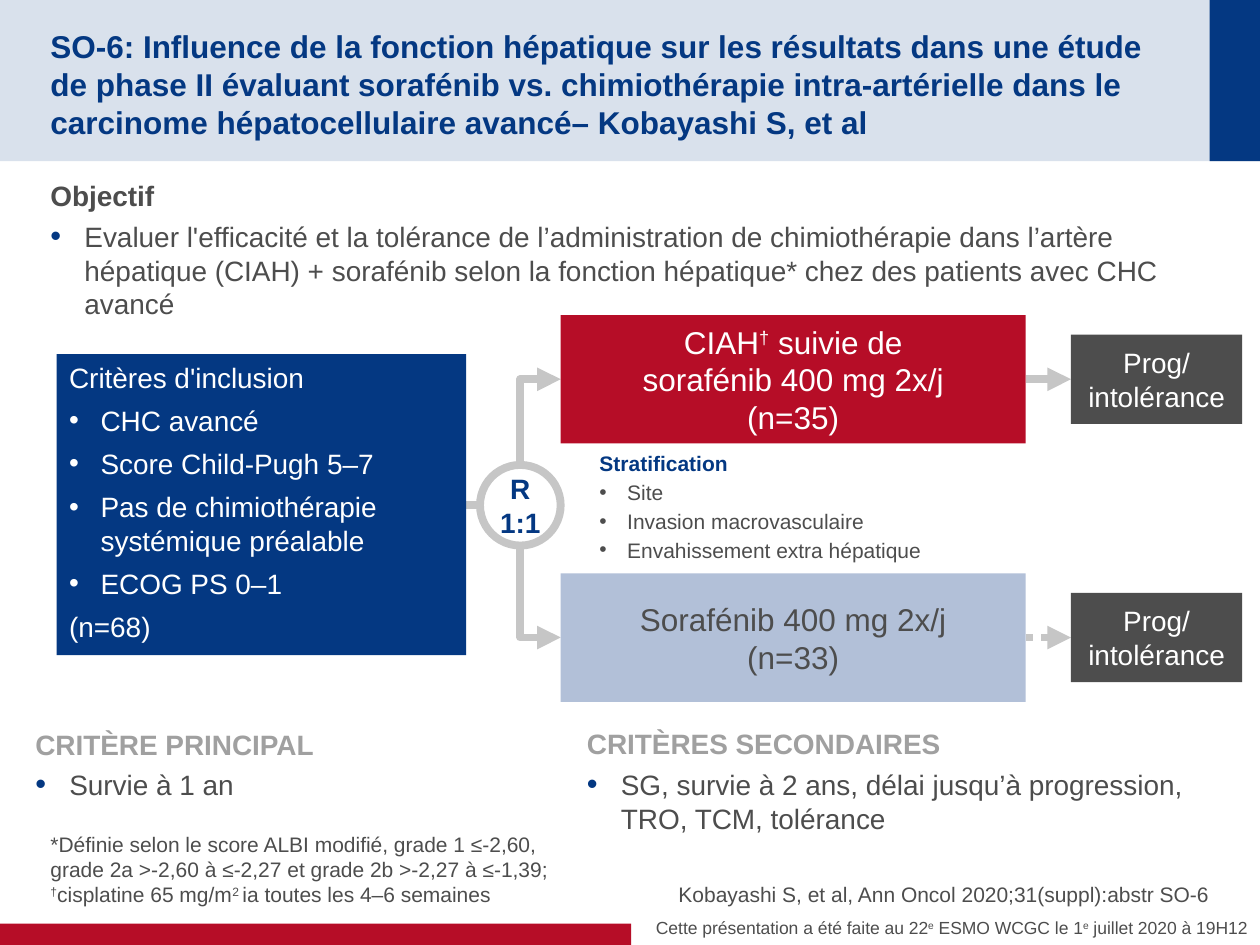
from dataclasses import dataclass

from lxml import etree
from pptx import Presentation
from pptx.dml.color import RGBColor
from pptx.enum.dml import MSO_LINE
from pptx.enum.shapes import MSO_CONNECTOR, MSO_SHAPE
from pptx.enum.text import MSO_ANCHOR, MSO_AUTO_SIZE, PP_ALIGN
from pptx.oxml.ns import qn
from pptx.util import Inches, Pt

RECT, OVAL = MSO_SHAPE.RECTANGLE, MSO_SHAPE.OVAL
STRAIGHT = MSO_CONNECTOR.STRAIGHT
DOTTED = MSO_LINE.ROUND_DOT
TOP, MIDDLE, BOTTOM = MSO_ANCHOR.TOP, MSO_ANCHOR.MIDDLE, MSO_ANCHOR.BOTTOM
LEFT, CENTER, RIGHT = PP_ALIGN.LEFT, PP_ALIGN.CENTER, PP_ALIGN.RIGHT


@dataclass(frozen=True)
class Theme:
    font: str = "Arial"
    navy: str = "043882"
    red: str = "B60D27"
    pale: str = "B2C0D8"
    dark: str = "4D4D4D"
    heading: str = "A0A0A0"
    line: str = "C6C6C6"
    white: str = "FFFFFF"
    large: int = 18
    normal: int = 16
    small: int = 12
    tiny: int = 10
    stroke: float = 4.5


T = Theme()


def rgb(code):
    return RGBColor.from_string(code)


def set_all(obj, values):
    for name, value in values.items():
        setattr(obj, name, value)


def para(text, color=T.dark, size=T.normal, bold=False, align=LEFT, after=0,
         indent=0, bullet_color=None, bullet_size=100):
    """Describe a paragraph; ^ encloses superscripts and a positive indent adds a bullet."""
    return dict(text=text, color=color, size=size, bold=bold, align=align, after=after,
                indent=indent, bullet_color=bullet_color or color, bullet_size=bullet_size)


def add_run(p, text, spec, raised):
    r = p.add_run()
    r.text = text
    set_all(r.font, dict(name=T.font, size=Pt(spec["size"]), bold=spec["bold"]))
    r.font.color.rgb = rgb(spec["color"])
    if raised:
        r.font._element.set("baseline", "30000")


def set_bullet(p, spec):
    pPr = p._p.get_or_add_pPr()
    indent = Inches(spec["indent"])
    pPr.set("marL", str(indent))
    pPr.set("indent", str(-indent))
    if not indent:
        etree.SubElement(pPr, qn("a:buNone"))
        return
    clr = etree.SubElement(pPr, qn("a:buClr"))
    etree.SubElement(clr, qn("a:srgbClr"), val=spec["bullet_color"])
    etree.SubElement(pPr, qn("a:buSzPct"), val=str(spec["bullet_size"] * 1000))
    etree.SubElement(pPr, qn("a:buFont"), typeface=T.font)
    etree.SubElement(pPr, qn("a:buChar"), char="•")


def write(sp, paras, anchor=TOP, insets=(0.1, 0.05, 0.1, 0.05), wrap=True):
    tf = sp.text_frame
    set_all(tf, dict(auto_size=MSO_AUTO_SIZE.NONE, word_wrap=wrap, vertical_anchor=anchor))
    sides = ("margin_left", "margin_top", "margin_right", "margin_bottom")
    set_all(tf, dict(zip(sides, map(Inches, insets))))
    for i, spec in enumerate(paras):
        p = tf.add_paragraph() if i else tf.paragraphs[0]
        set_all(p, dict(alignment=spec["align"], space_before=Pt(0),
                        space_after=Pt(spec["after"]), line_spacing=1.0))
        set_bullet(p, spec)
        for j, part in enumerate(spec["text"].split("^")):
            for k, line in enumerate(part.split("\n")):
                if k:
                    p.add_line_break()
                if line:
                    add_run(p, line, spec, raised=j % 2 == 1)


def fill_placeholder(sp, box, paras, **layout):
    set_all(sp, dict(zip(("left", "top", "width", "height"), map(Inches, box))))
    write(sp, paras, **layout)


def add_text(slide, box, paras, **layout):
    write(slide.shapes.add_textbox(*map(Inches, box)), paras, **layout)


def add_box(slide, box, fill, paras=(), **layout):
    sp = slide.shapes.add_shape(RECT, *map(Inches, box))
    sp.shadow.inherit = False
    sp.fill.solid()
    sp.fill.fore_color.rgb = rgb(fill)
    sp.line.fill.background()
    if paras:
        write(sp, paras, **layout)
    return sp


def add_band(slide, box, fill, opacity=100):
    """Draw a decorative band behind everything else."""
    sp = add_box(slide, box, fill)
    if opacity < 100:
        color = sp._element.spPr.find(".//" + qn("a:srgbClr"))
        etree.SubElement(color, qn("a:alpha"), val=str(opacity * 1000))
    slide.shapes._spTree.insert(2, sp._element)


def add_circle(slide, box, paras):
    sp = slide.shapes.add_shape(OVAL, *map(Inches, box))
    sp.shadow.inherit = False
    sp.fill.background()
    sp.line.color.rgb = rgb(T.line)
    sp.line.width = Pt(T.stroke)
    write(sp, paras, anchor=MIDDLE, wrap=False)


def add_line(slide, start, end, arrow=True, dash=None):
    c = slide.shapes.add_connector(STRAIGHT, *map(Inches, (*start, *end)))
    c.line.color.rgb = rgb(T.line)
    c.line.width = Pt(T.stroke)
    if dash:
        c.line.dash_style = dash
    if arrow:
        etree.SubElement(c.line._get_or_add_ln(), qn("a:tailEnd"), type="triangle")
    etree.SubElement(c._element.spPr, qn("a:effectLst"))
    return c


def add_elbow(slide, start, end):
    """Draw an arrow that leaves vertically and arrives from the left."""
    (x0, y0), (x1, y1) = start, end
    up = y1 < y0
    cx, cy = (x0 + x1) / 2, (y0 + y1) / 2
    half_w, half_h = abs(y1 - y0) / 2, (x1 - x0) / 2 * (1 if up else -1)
    c = add_line(slide, (cx + half_w, cy + half_h), (cx - half_w, cy - half_h))
    spPr = c._element.spPr
    spPr.find(qn("a:xfrm")).set("rot", str((90 if up else 270) * 60000))
    spPr.find(qn("a:prstGeom")).set("prst", "bentConnector2")


def section(heading, item, color=T.heading):
    return [para(heading, color, bold=True, after=4),
            para(item, after=4, indent=0.27, bullet_color=T.navy, bullet_size=110)]


def add_arm(slide, y, fill, color, text, dash=None):
    """Draw one treatment arm, centred on y, with its arrows and outcome."""
    arm_x, arm_w, arm_h, end_x, end_h = 4.45, 3.69, 1.02, 8.5, 0.71
    layout = dict(anchor=MIDDLE, insets=(0.1, 0, 0.1, 0))
    add_elbow(slide, (4.13, 3.69 if y < 4.01 else 4.33), (arm_x, y))
    add_line(slide, (arm_x + arm_w, y), (end_x, y), dash=dash)
    add_box(slide, (arm_x, y - arm_h / 2, arm_w, arm_h), fill,
            [para(text, color, T.large, align=CENTER)], **layout)
    add_box(slide, (end_x, y - end_h / 2, 1.36, end_h), T.dark,
            [para("Prog/\nintolérance", T.white, align=CENTER)], **layout)


def add_inclusion(slide):
    items = ["CHC avancé", "Score Child-Pugh 5–7",
             "Pas de chimiothérapie systémique préalable", "ECOG PS 0–1"]
    paras = [para("Critères d'inclusion", T.white, after=5.5),
             *(para(item, T.white, after=5.5, indent=0.25) for item in items),
             para("(n=68)", T.white, after=5.5)]
    add_box(slide, (0.45, 2.81, 3.25, 2.39), T.navy, paras)


def add_stratification(slide):
    items = ["Site", "Invasion macrovasculaire", "Envahissement extra hépatique"]
    paras = [para("Stratification", T.navy, T.small, bold=True, after=2),
             *(para(item, size=T.small, after=2, indent=0.22) for item in items)]
    add_text(slide, (4.66, 3.53, 5.03, 0.98), paras)


def fill_placeholders(slide):
    title, objective, primary, footnote, citation = slide.placeholders
    fill_placeholder(title, (0.4, 0.2, 9.01, 0.88), [para(
        "SO-6: Influence de la fonction hépatique sur les résultats dans une étude de phase II "
        "évaluant sorafénib vs. chimiothérapie intra-artérielle dans le carcinome "
        "hépatocellulaire avancé– Kobayashi S, et al", T.navy, T.large, bold=True)],
        anchor=MIDDLE, insets=(0, 0.05, 0, 0))
    fill_placeholder(objective, (0.4, 1.37, 9.2, 1.2), section(
        "Objectif",
        "Evaluer l'efficacité et la tolérance de l’administration de chimiothérapie dans "
        "l’artère hépatique (CIAH) + sorafénib selon la fonction hépatique* chez des patients "
        "avec CHC avancé", T.dark), insets=(0, 0.05, 0, 0.05))
    fill_placeholder(primary, (0.28, 5.72, 4.52, 0.85),
                     section("CRITÈRE PRINCIPAL", "Survie à 1 an"), insets=(0, 0.05, 0, 0.05))
    notes = dict(anchor=BOTTOM, insets=(0, 0, 0, 0))
    fill_placeholder(footnote, (0.4, 6.67, 4.26, 0.53), [para(
        "*Définie selon le score ALBI modifié, grade 1 ≤-2,60, grade 2a >-2,60 à ≤-2,27 et "
        "grade 2b >-2,27 à ≤-1,39; ^†^cisplatine 65 mg/m^2 ^ia toutes les 4–6 semaines",
        size=T.small, after=4)], **notes)
    fill_placeholder(citation, (5.08, 6.67, 4.52, 0.53), [para(
        "Kobayashi S, et al, Ann Oncol 2020;31(suppl):abstr SO-6",
        size=T.small, align=RIGHT, after=4)], **notes)


def main():
    prs = Presentation()
    prs.slide_width, prs.slide_height = Inches(10), Inches(7.5)
    slide = prs.slides.add_slide(prs.slide_layouts.get_by_name("Comparison"))
    fill_placeholders(slide)
    add_band(slide, (0, 7.33, 5.01, 0.17), T.red)
    add_band(slide, (9.6, 0, 0.4, 1.28), T.navy)
    add_band(slide, (0, 0, 10, 1.28), T.navy, opacity=15)
    add_line(slide, (3.69, 4.01), (3.81, 4.01), arrow=False)
    add_circle(slide, (3.81, 3.69, 0.64, 0.64),
               [para(text, T.navy, bold=True, align=CENTER) for text in ("R", "1:1")])
    add_inclusion(slide)
    add_arm(slide, 3.01, T.red, T.white, "CIAH^†^ suivie de\nsorafénib 400 mg 2x/j\n(n=35)")
    add_arm(slide, 5.06, T.pale, T.dark, "Sorafénib 400 mg 2x/j\n(n=33)", dash=DOTTED)
    add_stratification(slide)
    add_text(slide, (4.56, 5.72, 5.3, 0.91), section(
        "CRITÈRES SECONDAIRES",
        "SG, survie à 2 ans, délai jusqu’à progression, TRO, TCM, tolérance"))
    add_text(slide, (5, 7.23, 5, 0.27), [para(
        "Cette présentation a été faite au 22^e^ ESMO WCGC le 1^e^ juillet 2020 à 19H12",
        size=T.tiny, align=RIGHT)])
    prs.save("out.pptx")


if __name__ == "__main__":
    main()
